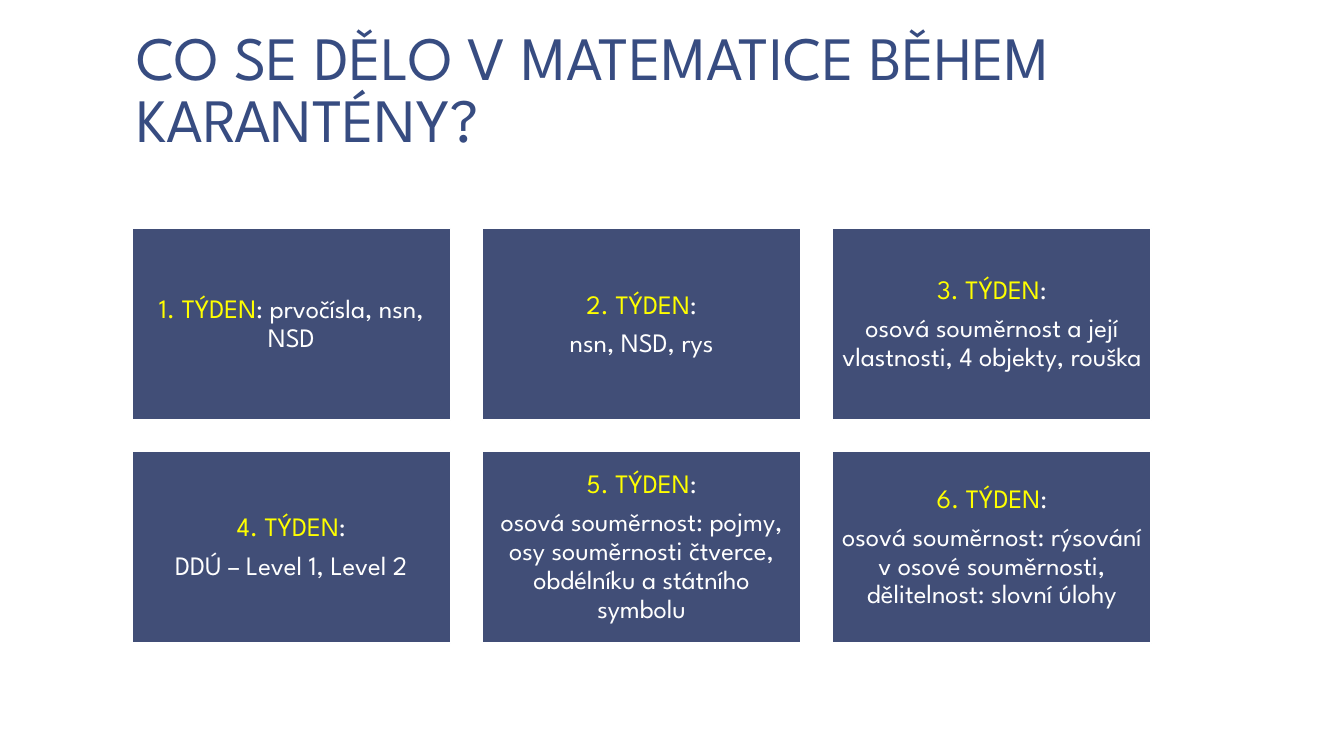
import pptx
import pptx.util
import pptx.dml.color
import pptx.enum.shapes
import pptx.enum.text

Pt = pptx.util.Pt
Align = pptx.enum.text.PP_ALIGN
Anchor = pptx.enum.text.MSO_ANCHOR

FONT = "League Spartan"
COLORS = {"title": "374C81", "card": "414E77", "week": "FFFF00", "text": "FFFFFF"}
TITLE = "CO SE DĚLO V MATEMATICE BĚHEM KARANTÉNY?"
WEEKS = [
    [": prvočísla, nsn, NSD"],
    [":", "nsn, NSD, rys"],
    [":", "osová souměrnost a její vlastnosti, 4 objekty, rouška"],
    [":", "DDÚ – Level 1, Level 2"],
    [":", "osová souměrnost: pojmy, osy souměrnosti čtverce, obdélníku a státního symbolu"],
    [":", "osová souměrnost: rýsování v osové souměrnosti, dělitelnost: slovní úlohy"],
]
COLS = 3
LEFT, TOP = 94.3, 163.4
WIDTH, HEIGHT = 227.6, 136.8
STEP_X, STEP_Y = 250.2, 159.2


def color(name):
    return pptx.dml.color.RGBColor.from_string(COLORS[name])


def add_text(text, para, size=19, fill="text"):
    run = para.add_run()
    run.text = text
    run.font.name = FONT
    run.font.size = Pt(size)
    run.font.color.rgb = color(fill)


def set_frame(frame, anchor, side, edge):
    frame.word_wrap = True
    frame.auto_size = pptx.enum.text.MSO_AUTO_SIZE.NONE
    frame.vertical_anchor = anchor
    frame.margin_left = frame.margin_right = Pt(side)
    frame.margin_top = frame.margin_bottom = Pt(edge)


def set_title(slide):
    title = slide.shapes.title
    title.left, title.top = Pt(87.8), Pt(5.8)
    title.width, title.height = Pt(800), Pt(110.2)
    set_frame(title.text_frame, Anchor.BOTTOM, 9.4, 5)
    para = title.text_frame.paragraphs[0]
    para.alignment = Align.LEFT
    para.line_spacing = 0.85
    para.space_before = Pt(0)
    add_text(TITLE, para, size=44, fill="title")


def add_card(slide, index, lines):
    row, col = divmod(index, COLS)
    card = slide.shapes.add_shape(
        pptx.enum.shapes.MSO_SHAPE.RECTANGLE,
        Pt(LEFT + col * STEP_X), Pt(TOP + row * STEP_Y), Pt(WIDTH), Pt(HEIGHT))
    card.name = f"Week {index + 1}"
    card.shadow.inherit = False
    card.fill.solid()
    card.fill.fore_color.rgb = color("card")
    card.line.color.rgb = color("text")
    card.line.width = Pt(1)
    frame = card.text_frame
    set_frame(frame, Anchor.MIDDLE, 5.7, 5.7)
    for number, line in enumerate(lines):
        para = frame.add_paragraph() if number else frame.paragraphs[0]
        para.alignment = Align.CENTER
        para.line_spacing = 0.9
        para.space_after = Pt(6.65)
        if number == 0:
            add_text(f"{index + 1}. TÝDEN", para, fill="week")
        add_text(line, para)


def main():
    deck = pptx.Presentation()
    deck.slide_width, deck.slide_height = Pt(960), Pt(540)
    slide = deck.slides.add_slide(deck.slide_layouts[5])
    set_title(slide)
    for index, lines in enumerate(WEEKS):
        add_card(slide, index, lines)
    deck.save("out.pptx")


if __name__ == "__main__":
    main()
